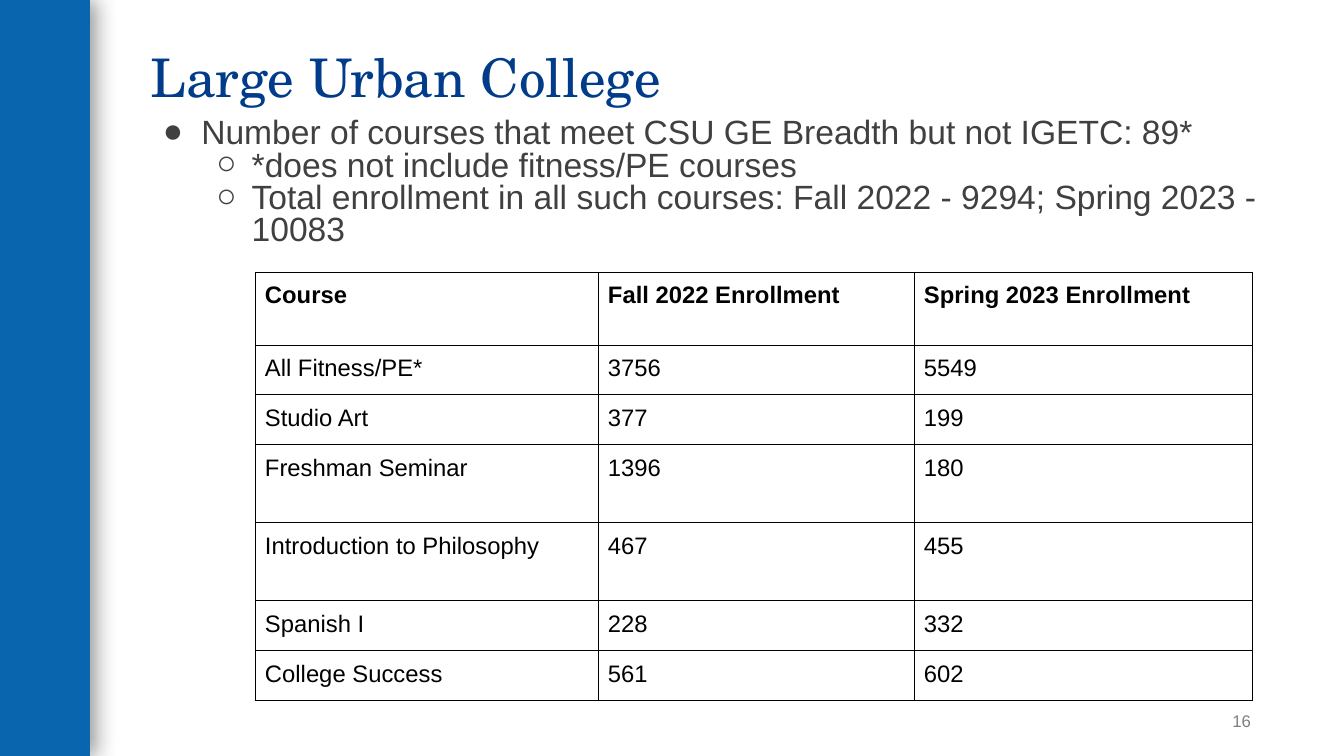
from lxml import etree
from pptx import Presentation
from pptx import util as u
from pptx.dml.color import RGBColor
from pptx.enum import shapes, text
from pptx.oxml import parse_xml
from pptx.oxml.ns import nsdecls, qn

C = {"bar": "0A65AF", "title": "003C89", "body": "404040",
     "table": "000000", "number": "7F7F7F"}
SCALE = 12192000 / 1344


def px(n):
    return u.Emu(round(n * SCALE))


def add_run(p, words, size, color, font="Arial", bold=False):
    r = p.add_run()
    r.text = words
    r.font.size = u.Pt(size)
    r.font.name = font
    r.font.bold = bold
    r.font.color.rgb = RGBColor.from_string(C[color])


prs = Presentation()
prs.slide_width, prs.slide_height = px(1344), px(756)
s = prs.slides.add_slide(prs.slide_layouts[6])

# Side bar with a soft shadow to its right
bar = s.shapes.add_shape(shapes.MSO_SHAPE.RECTANGLE, 0, 0, px(90), px(756))
bar.fill.solid()
bar.fill.fore_color.rgb = RGBColor.from_string(C["bar"])
bar.line.fill.background()
bar.shadow.inherit = False
bar._element.spPr.find(qn("a:effectLst")).append(parse_xml(
    f'<a:outerShdw {nsdecls("a")} blurRad="{u.Pt(15)}" dist="{u.Pt(4)}" dir="0" '
    'algn="l" rotWithShape="0"><a:srgbClr val="000000"><a:alpha val="40000"/>'
    '</a:srgbClr></a:outerShdw>'))

# Title
tf = s.shapes.add_textbox(px(141), px(15), px(1108), px(99)).text_frame
tf.word_wrap = True
tf.vertical_anchor = text.MSO_ANCHOR.BOTTOM
p = tf.paragraphs[0]
p.line_spacing = 0.9
add_run(p, "Large Urban College", 38, "title", "TeX Gyre Schola")

# Bullets: level, text
bullets = [
    (0, "Number of courses that meet CSU GE Breadth but not IGETC: 89*"),
    (1, "*does not include fitness/PE courses"),
    (1, "Total enrollment in all such courses: Fall 2022 - 9294; Spring 2023 - 10083"),
]
tf = s.shapes.add_textbox(px(141), px(114), px(1180), px(153)).text_frame
tf.word_wrap = True
for i, (level, words) in enumerate(bullets):
    p = tf.paragraphs[0] if i == 0 else tf.add_paragraph()
    p.level = level
    p.line_spacing = 0.8
    pPr = p._p.get_or_add_pPr()
    pPr.set("marL", str(u.Inches(0.5 * (level + 1))))
    pPr.set("indent", str(-u.Inches((0.38, 0.35)[level])))
    etree.SubElement(pPr, qn("a:buFont"), typeface="Arial")
    etree.SubElement(pPr, qn("a:buChar"), char="●○"[level])
    add_run(p, words, 24, "body")

# Enrollment table
rows = [
    ("Course", "Fall 2022 Enrollment", "Spring 2023 Enrollment"),
    ("All Fitness/PE*", "3756", "5549"),
    ("Studio Art", "377", "199"),
    ("Freshman Seminar", "1396", "180"),
    ("Introduction to Philosophy", "467", "455"),
    ("Spanish I", "228", "332"),
    ("College Success", "561", "602"),
]
widths = [343, 316, 338]
heights = [73, 50, 50, 78, 78, 50, 50]
table = s.shapes.add_table(len(rows), len(widths), px(255), px(272),
                           px(sum(widths)), px(sum(heights))).table
table.first_row = True
table.horz_banding = False
for col, width in zip(table.columns, widths):
    col.width = px(width)
for i, (row, height) in enumerate(zip(rows, heights)):
    table.rows[i].height = px(height)
    for j, words in enumerate(row):
        cell = table.cell(i, j)
        cell.margin_left = cell.margin_right = px(10)
        cell.margin_top = cell.margin_bottom = px(10)
        tcPr = cell._tc.get_or_add_tcPr()
        for side in ("lnL", "lnR", "lnT", "lnB"):
            tcPr.append(parse_xml(
                f'<a:{side} {nsdecls("a")} w="9525"><a:solidFill>'
                f'<a:srgbClr val="{C["table"]}"/></a:solidFill></a:{side}>'))
        cell.fill.background()
        add_run(cell.text_frame.paragraphs[0], words, 17, "table", bold=i == 0)

# Slide number
tf = s.shapes.add_textbox(px(1150), px(701), px(101), px(40)).text_frame
tf.word_wrap = True
tf.margin_right = 0
tf.vertical_anchor = text.MSO_ANCHOR.MIDDLE
p = tf.paragraphs[0]
p.alignment = text.PP_ALIGN.RIGHT
add_run(p, "16", 12, "number")

prs.save("out.pptx")
